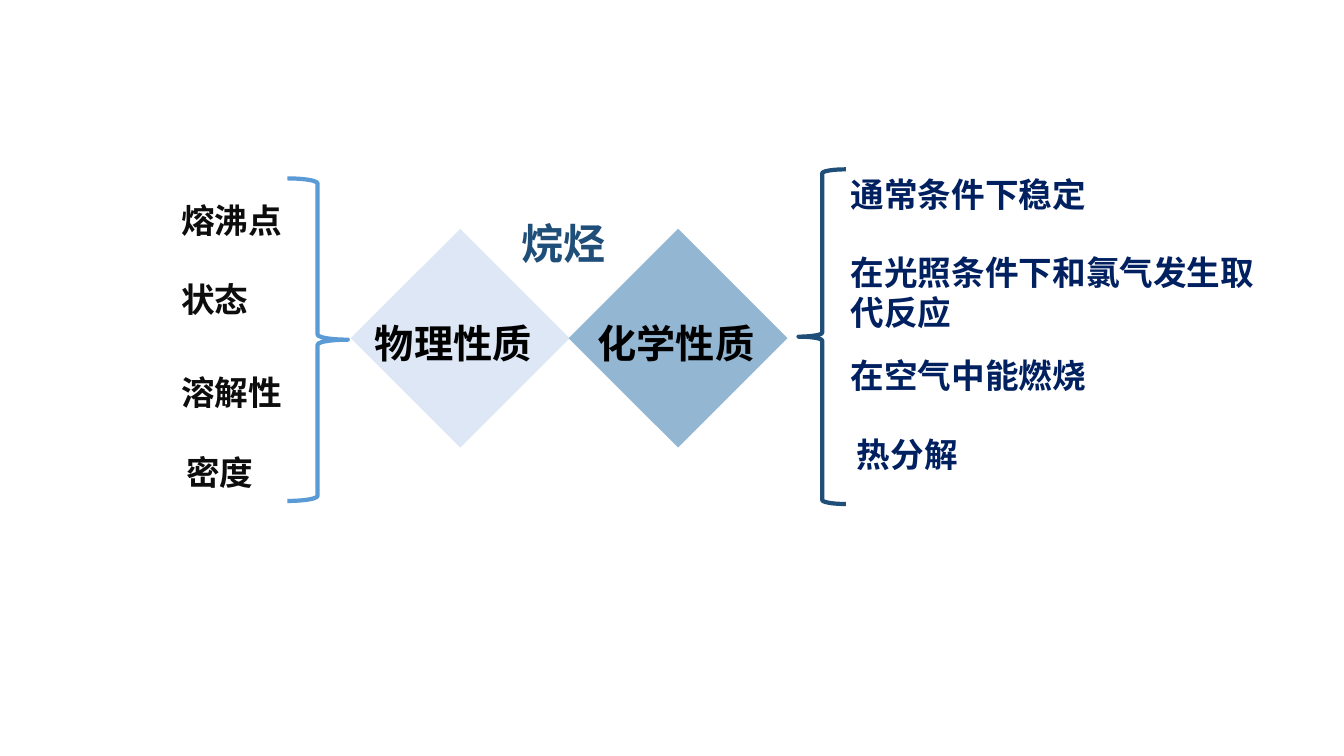
"""Build a slide that maps the physical and chemical properties of alkanes."""
from dataclasses import dataclass

from lxml import etree
from pptx import Presentation
from pptx import util as u
from pptx.dml import color
from pptx.enum import shapes, text
from pptx.oxml import ns

FONT = "Noto Sans CJK SC"
COLORS = {
    "physical": "DEE7F6",
    "chemical": "93B6D2",
    "physical_brace": "5B9BD5",
    "title": "1F4E79",
    "black": "000000",
    "physical_item": "0D0D0D",
    "chemical_item": "002060",
}


@dataclass(frozen=True)
class Label:
    wording: str
    left: float
    top: float
    width: float
    height: float
    size: int
    color: str
    wrap: bool = True


@dataclass(frozen=True)
class Figure:
    preset: shapes.MSO_SHAPE
    left: float
    top: float
    width: float
    height: float
    color: str
    outlined: bool = False


FIGURES = [
    Figure(shapes.MSO_SHAPE.DIAMOND, 3.48, 2.27, 2.17, 2.17, "physical"),
    Figure(shapes.MSO_SHAPE.DIAMOND, 5.64, 2.27, 2.17, 2.17, "chemical"),
    Figure(shapes.MSO_SHAPE.RIGHT_BRACE, 2.85, 1.77, 0.6, 3.2, "physical_brace", True),
    Figure(shapes.MSO_SHAPE.LEFT_BRACE, 7.92, 1.68, 0.47, 3.32, "title", True),
]
HEADINGS = [
    Label("物理性质", 3.62, 3.12, 1.76, 0.57, 28, "black", False),
    Label("化学性质", 5.83, 3.12, 1.76, 0.57, 28, "black", False),
    Label("烷烃", 5.07, 2.11, 1.34, 0.6, 30, "title"),
]
PHYSICAL_ITEMS = [
    Label(wording, left, top, 1.34, 0.5, 24, "physical_item")
    for wording, left, top in [
        ("熔沸点", 1.7, 1.93),
        ("状态", 1.7, 2.72),
        ("溶解性", 1.7, 3.64),
        ("密度", 1.75, 4.43),
    ]
]
CHEMICAL_ITEMS = [
    Label(wording, left, top, 4.2, height, 24, "chemical_item")
    for wording, left, top, height in [
        ("通常条件下稳定", 8.34, 1.68, 2.22),
        ("在光照条件下和氯气发生取代反应", 8.34, 2.45, 2.64),
        ("在空气中能燃烧", 8.34, 3.47, 0.53),
        ("热分解", 8.4, 4.26, 0.53),
    ]
]


def rgb(name: str) -> color.RGBColor:
    return color.RGBColor.from_string(COLORS[name])


def draw_figure(slide, figure: Figure) -> None:
    shape = slide.shapes.add_shape(
        figure.preset,
        u.Inches(figure.left),
        u.Inches(figure.top),
        u.Inches(figure.width),
        u.Inches(figure.height),
    )
    shape.shadow.inherit = False
    if figure.outlined:
        shape.fill.background()
        shape.line.color.rgb = rgb(figure.color)
        shape.line.width = u.Pt(3)
    else:
        shape.fill.solid()
        shape.fill.fore_color.rgb = rgb(figure.color)
        shape.line.fill.background()


def draw_label(slide, label: Label) -> None:
    box = slide.shapes.add_textbox(
        u.Inches(label.left),
        u.Inches(label.top),
        u.Inches(label.width),
        u.Inches(label.height),
    )
    frame = box.text_frame
    frame.word_wrap = label.wrap
    frame.vertical_anchor = text.MSO_ANCHOR.TOP
    run = frame.paragraphs[0].add_run()
    run.text = label.wording
    run.font.size = u.Pt(label.size)
    run.font.bold = True
    run.font.color.rgb = rgb(label.color)
    run.font.name = FONT
    etree.SubElement(run.font._element, ns.qn("a:ea"), typeface=FONT)


def main() -> None:
    deck = Presentation()
    deck.slide_width = u.Inches(13.33)
    deck.slide_height = u.Inches(7.5)
    slide = deck.slides.add_slide(deck.slide_layouts[6])
    for figure in FIGURES:
        draw_figure(slide, figure)
    for label in HEADINGS + PHYSICAL_ITEMS + CHEMICAL_ITEMS:
        draw_label(slide, label)
    deck.save("out.pptx")


if __name__ == "__main__":
    main()
